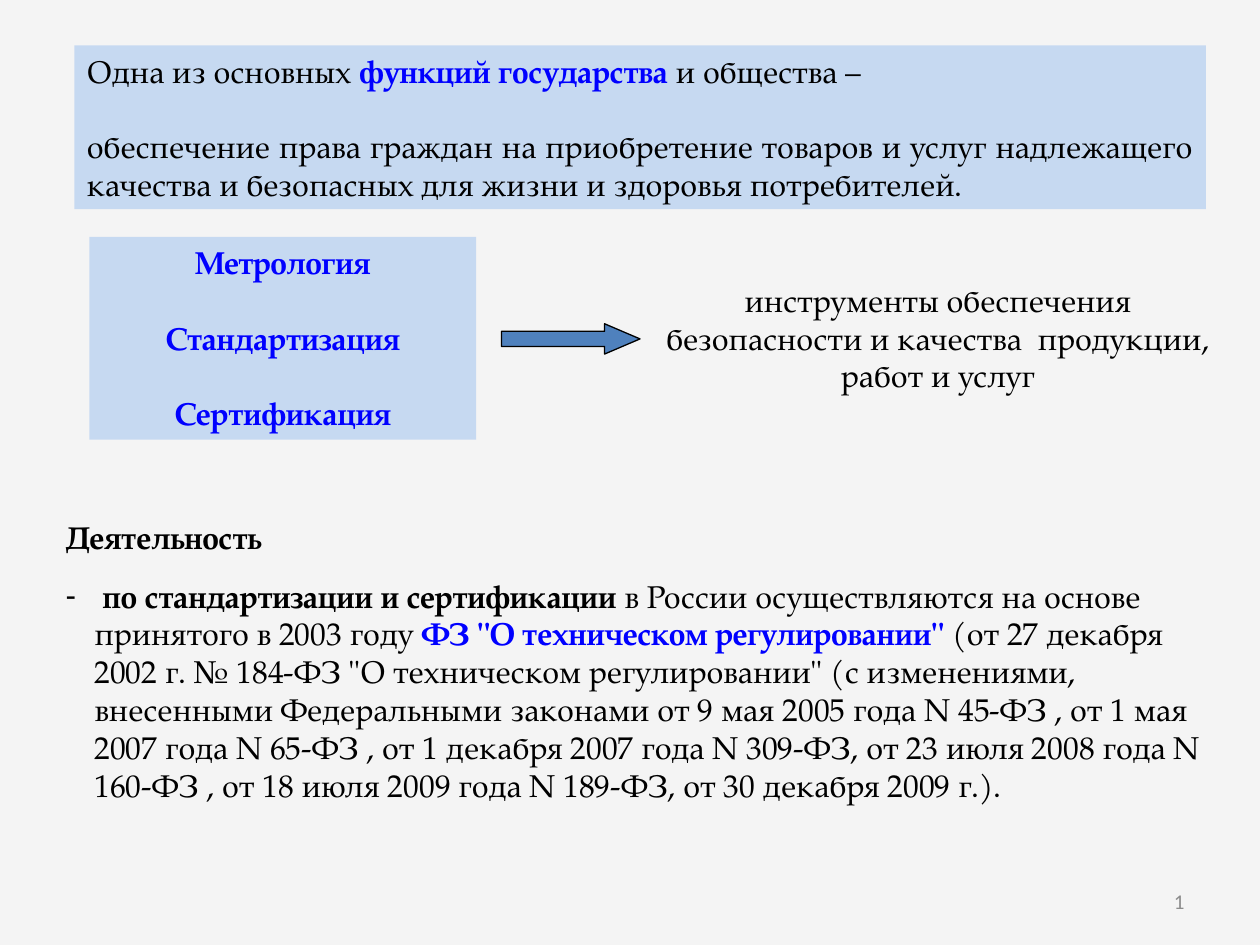
from dataclasses import dataclass
from typing import NamedTuple

import lxml.etree
import pptx
import pptx.dml.color
import pptx.enum.shapes
import pptx.enum.text
import pptx.oxml.ns
import pptx.util

Inches = pptx.util.Inches
Pt = pptx.util.Pt
ALIGN = pptx.enum.text.PP_ALIGN
ANCHOR = pptx.enum.text.MSO_ANCHOR
SHAPE = pptx.enum.shapes.MSO_SHAPE


@dataclass(frozen=True)
class Theme:
    background: str = "F4F4F4"
    panel: str = "C6D9F1"
    arrow: str = "4F81BD"
    ink: str = "000000"
    accent: str = "0000FF"
    muted: str = "8C8C8C"
    font: str = "TeX Gyre Pagella"
    number_font: str = "Calibri"
    text_size: int = 18
    number_size: int = 12
    line_gap: float = 21.6
    list_gap: int = 12


THEME = Theme()


class Piece(NamedTuple):
    text: str
    bold: bool = False
    color: str = THEME.ink


class Line(NamedTuple):
    pieces: list[Piece]
    align: ALIGN = ALIGN.LEFT
    before: float = 0
    bullet: str = ""


def rgb(value: str) -> pptx.dml.color.RGBColor:
    return pptx.dml.color.RGBColor.from_string(value)


def apply(target, formats: dict) -> None:
    for name, value in formats.items():
        setattr(target, name, value)


def place(shape, left: float, top: float, width: float, height: float) -> None:
    apply(shape, {"left": Inches(left), "top": Inches(top),
                  "width": Inches(width), "height": Inches(height)})


def paint(shape, color: str) -> None:
    shape.fill.solid()
    shape.fill.fore_color.rgb = rgb(color)


def set_bullet(paragraph, bullet: str) -> None:
    """Give a paragraph a hanging bullet, or switch the bullet off."""
    properties = paragraph._p.get_or_add_pPr()
    hang = Inches(0.23) if bullet else 0
    properties.set("marL", str(hang))
    properties.set("indent", str(-hang))
    tag = "a:buChar" if bullet else "a:buNone"
    mark = lxml.etree.SubElement(properties, pptx.oxml.ns.qn(tag))
    if bullet:
        mark.set("char", bullet)


def write(shape, lines: list[Line], anchor: ANCHOR = ANCHOR.TOP) -> None:
    frame = shape.text_frame
    apply(frame, {"word_wrap": True, "vertical_anchor": anchor,
                  "auto_size": pptx.enum.text.MSO_AUTO_SIZE.NONE})
    for index, line in enumerate(lines):
        paragraph = frame.add_paragraph() if index else frame.paragraphs[0]
        set_bullet(paragraph, line.bullet)
        apply(paragraph, {"alignment": line.align, "line_spacing": 1.0,
                          "space_before": Pt(line.before), "space_after": Pt(0)})
        for piece in line.pieces:
            run = paragraph.add_run()
            run.text = piece.text
            apply(run.font, {"name": THEME.font, "size": Pt(THEME.text_size),
                             "bold": piece.bold})
            run.font.color.rgb = rgb(piece.color)


def add_slide_number(slide, number: int) -> None:
    box = slide.shapes.add_textbox(Inches(7.17), Inches(6.95), Inches(2.33), Inches(0.4))
    apply(box.text_frame, {"word_wrap": True, "vertical_anchor": ANCHOR.MIDDLE})
    paragraph = box.text_frame.paragraphs[0]
    paragraph.alignment = ALIGN.RIGHT
    run = paragraph.add_run()
    run.text = str(number)
    apply(run.font, {"name": THEME.number_font, "size": Pt(THEME.number_size)})
    run.font.color.rgb = rgb(THEME.muted)
    # Turn the formatted run into a slide number field
    run._r.tag = pptx.oxml.ns.qn("a:fld")
    run._r.set("id", "{B6F15528-21DE-4FAA-801E-634DDDAF4B2B}")
    run._r.set("type", "slidenum")


def main() -> None:
    deck = pptx.Presentation()
    apply(deck, {"slide_width": Inches(10), "slide_height": Inches(7.5)})
    slide = deck.slides.add_slide(deck.slide_layouts[1])
    paint(slide.background, THEME.background)

    # Leading statement
    statement = slide.shapes.title
    place(statement, 0.59, 0.36, 8.98, 1.3)
    paint(statement, THEME.panel)
    write(statement, [
        Line([Piece("Одна из основных "),
              Piece("функций государства", True, THEME.accent),
              Piece(" и общества –")]),
        Line([Piece("обеспечение права граждан на приобретение товаров и услуг "
                    "надлежащего качества и безопасных для жизни и здоровья "
                    "потребителей.")], ALIGN.JUSTIFY, THEME.line_gap),
    ])

    # Three disciplines
    disciplines = slide.shapes.add_shape(
        SHAPE.RECTANGLE, Inches(0.71), Inches(1.88), Inches(3.07), Inches(1.61))
    disciplines.shadow.inherit = False
    paint(disciplines, THEME.panel)
    disciplines.line.fill.background()
    names = ["Метрология", "Стандартизация", "Сертификация"]
    write(disciplines, [
        Line([Piece(name, True, THEME.accent)], ALIGN.CENTER,
             THEME.line_gap if index else 0)
        for index, name in enumerate(names)])

    # What they serve
    purpose = slide.shapes.add_textbox(
        Inches(5.08), Inches(2.18), Inches(4.73), Inches(1))
    write(purpose, [Line([Piece("инструменты обеспечения безопасности и качества  "
                                "продукции, работ и услуг")], ALIGN.CENTER)])

    # Legal basis
    legal_basis = slide.placeholders[1]
    place(legal_basis, 0.42, 4.06, 9.21, 2.67)
    write(legal_basis, [
        Line([Piece("Деятельность", True)]),
        Line([Piece(" по стандартизации и сертификации", True),
              Piece(" в России осуществляются на основе принятого в 2003 году "),
              Piece('ФЗ "О техническом регулировании"', True, THEME.accent),
              Piece(' (от 27 декабря 2002 г. № 184-ФЗ "О техническом '
                    'регулировании" (с изменениями, внесенными Федеральными '
                    "законами от 9 мая 2005 года N 45-ФЗ , от 1 мая 2007 года "
                    "N 65-ФЗ , от 1 декабря 2007 года N 309-ФЗ, от 23 июля 2008 "
                    "года N 160-ФЗ , от 18 июля 2009 года N 189-ФЗ, от 30 декабря "
                    "2009 г.).")],
             before=THEME.list_gap, bullet="-"),
    ])

    # Arrow from disciplines to purpose
    arrow = slide.shapes.add_shape(
        SHAPE.RIGHT_ARROW, Inches(3.98), Inches(2.57), Inches(1.1), Inches(0.24))
    arrow.shadow.inherit = False
    arrow.adjustments[1] = 1.17
    paint(arrow, THEME.arrow)
    arrow.line.color.rgb = rgb(THEME.ink)
    arrow.line.width = Pt(0.75)

    add_slide_number(slide, 2)
    deck.save("out.pptx")


if __name__ == "__main__":
    main()
